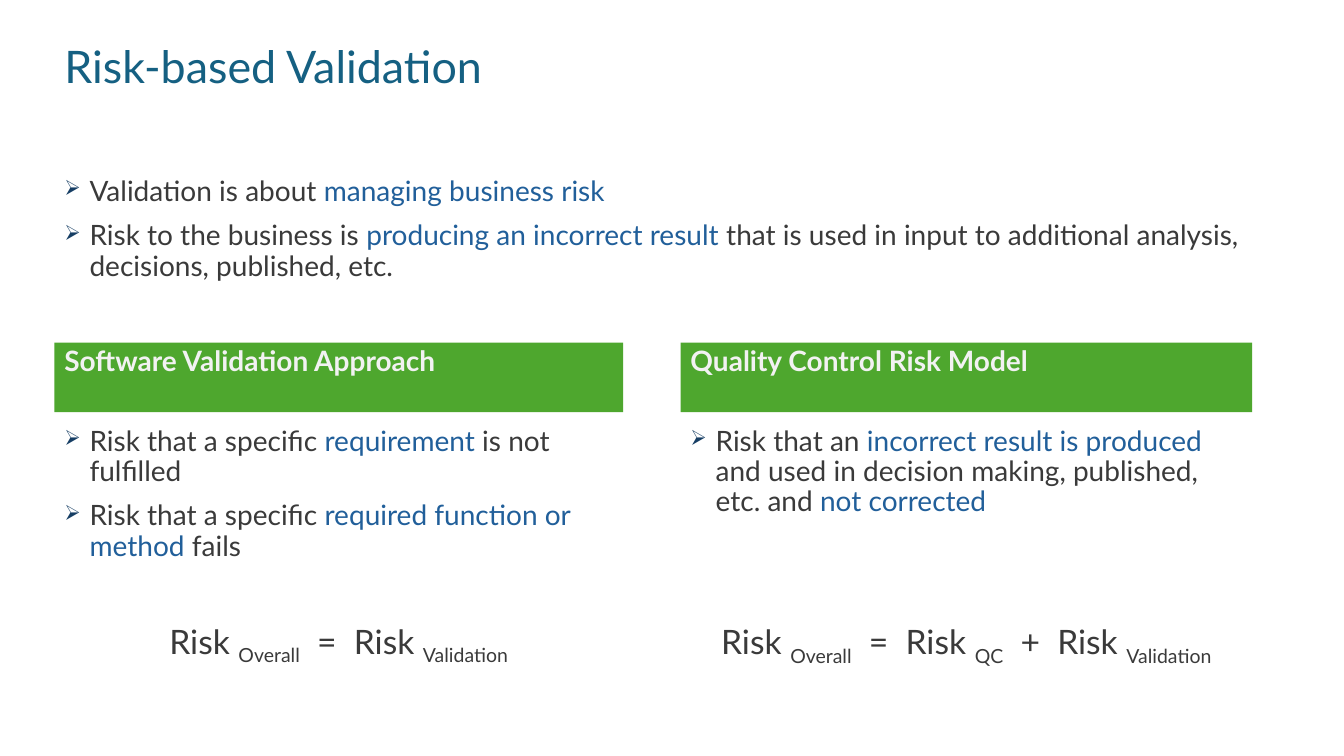
from lxml.etree import SubElement
from pptx import Presentation
from pptx.dml.color import RGBColor
from pptx.enum.shapes import MSO_SHAPE as Shape
from pptx.enum.text import MSO_ANCHOR as Anchor, PP_ALIGN as Align
from pptx.oxml.ns import qn
from pptx.util import Pt

PX = 9144
FONT = "Lato"
TITLE_BLUE = "156082"
ACCENT = "215F9A"
BULLET = "163E64"
TEXT = "3A3A3A"
GREEN = "4EA72E"
PALE = "F2F2F2"
LEFT, RIGHT = 54, 675
LEFT_WIDTH, RIGHT_WIDTH = 564, 567
HEADING_TOP, HEADING_HEIGHT = 340, 69
BODY_TOP, BODY_HEIGHT = 419, 310


def color(value):
    return RGBColor.from_string(value)


def px(*lengths):
    return [length * PX for length in lengths]


def prepare(box):
    frame = box.text_frame
    frame.word_wrap = True
    frame.vertical_anchor = Anchor.TOP
    return frame


def add_box(page, area):
    return prepare(page.shapes.add_textbox(*px(*area)))


def add_para(frame, before=10, align=Align.LEFT):
    para = frame.paragraphs[0]
    if para.runs:
        para = frame.add_paragraph()
        para.space_before = Pt(before)
    para.line_spacing = 0.9
    para.alignment = align
    return para


def add_span(para, text, size, fill=TEXT, bold=False):
    span = para.add_run()
    span.text = text
    span.font.name = FONT
    span.font.size = Pt(size)
    span.font.bold = bold
    span.font.color.rgb = color(fill)
    return span


def add_bullet(frame, *parts):
    para = add_para(frame)
    props = para._p.get_or_add_pPr()
    indent = 25 * PX
    props.set("marL", str(indent))
    props.set("indent", str(-indent))
    tint = SubElement(props, qn("a:buClr"))
    SubElement(tint, qn("a:srgbClr"), val=BULLET)
    SubElement(props, qn("a:buSzPct"), val="75000")
    SubElement(props, qn("a:buChar"), char="➢")
    for text, fill in parts:
        add_span(para, text, 20, fill)


def add_formula(frame, before, *terms):
    para = add_para(frame, before, Align.CENTER)
    for lead, subscript in terms:
        add_span(para, lead, 24)
        span = add_span(para, subscript, 24)
        span._r.get_or_add_rPr().set("baseline", "-25000")


def add_heading(page, left, width, text):
    bar = page.shapes.add_shape(
        Shape.RECTANGLE, *px(left, HEADING_TOP, width, HEADING_HEIGHT))
    bar.shadow.inherit = False
    bar.fill.solid()
    bar.fill.fore_color.rgb = color(GREEN)
    bar.line.fill.background()
    add_span(add_para(prepare(bar)), text, 20, PALE, bold=True)


def main():
    deck = Presentation()
    deck.slide_width, deck.slide_height = px(1333, 750)
    page = deck.slides.add_slide(deck.slide_layouts[6])

    title = add_box(page, (LEFT, 40, 1188, 90))
    add_span(add_para(title), "Risk-based Validation", 32, TITLE_BLUE)

    intro = add_box(page, (LEFT, 171, 1190, 122))
    add_bullet(intro, ("Validation is about ", TEXT),
               ("managing business risk", ACCENT))
    add_bullet(intro, ("Risk to the business is ", TEXT),
               ("producing an incorrect result", ACCENT),
               (" that is used in input to additional analysis, "
                "decisions, published, etc.", TEXT))

    add_heading(page, LEFT, LEFT_WIDTH, "Software Validation Approach")
    approach = add_box(page, (LEFT, BODY_TOP, LEFT_WIDTH, BODY_HEIGHT))
    add_bullet(approach, ("Risk that a specific ", TEXT),
               ("requirement", ACCENT), (" is not fulfilled", TEXT))
    add_bullet(approach, ("Risk that a specific ", TEXT),
               ("required function or method", ACCENT), (" fails", TEXT))
    add_formula(approach, 42, ("Risk ", "Overall"),
                ("  =  Risk ", "Validation"))

    add_heading(page, RIGHT, RIGHT_WIDTH, "Quality Control Risk Model")
    model = add_box(page, (RIGHT, BODY_TOP, RIGHT_WIDTH, BODY_HEIGHT))
    add_bullet(model, ("Risk that an ", TEXT),
               ("incorrect result is produced", ACCENT),
               (" and used in decision making, published, etc. and ", TEXT),
               ("not corrected", ACCENT))
    add_formula(model, 74, ("Risk ", "Overall"), ("  =  Risk ", "QC"),
                ("  +  Risk ", "Validation"))

    deck.save("out.pptx")


if __name__ == "__main__":
    main()
